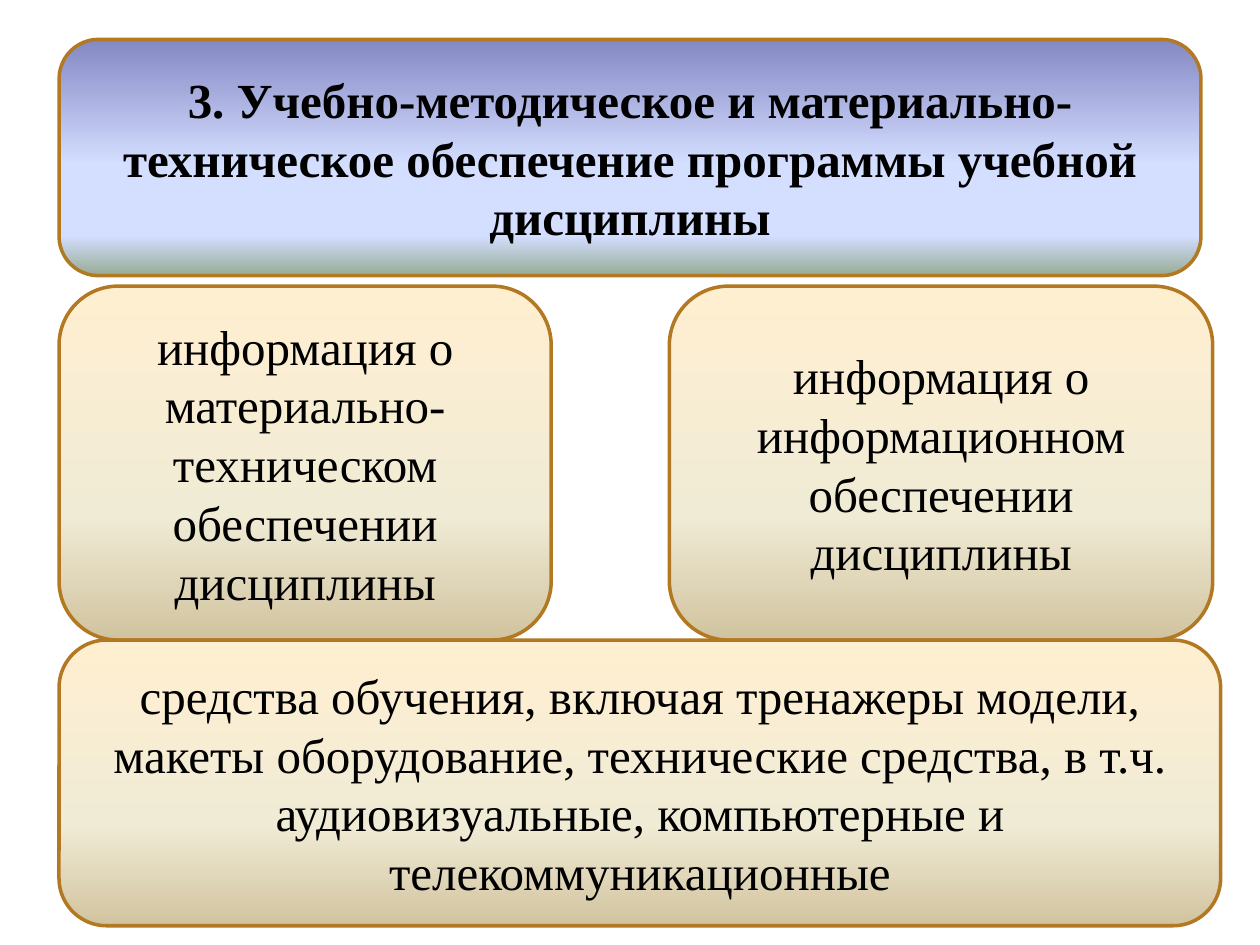
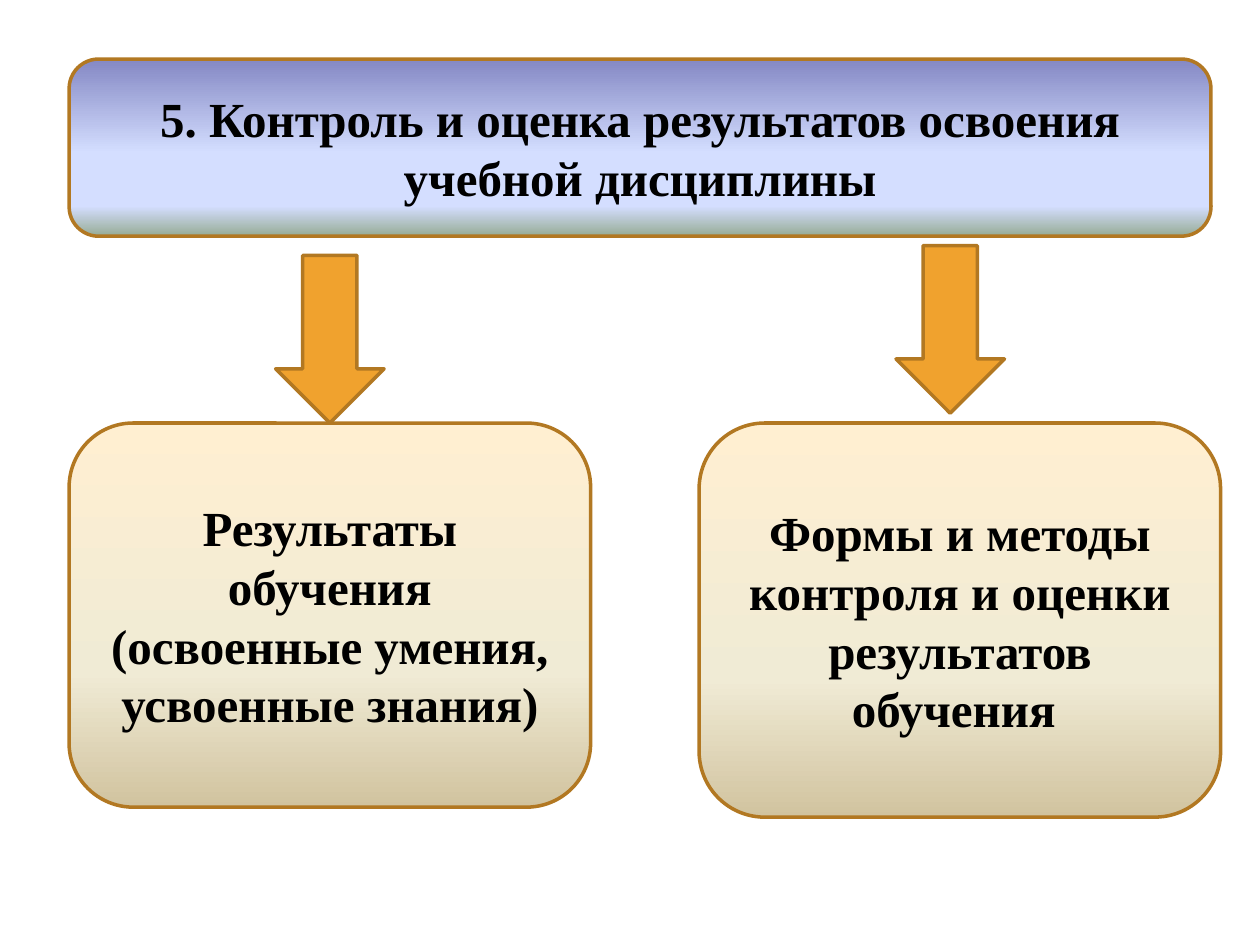
from collections import namedtuple

from lxml.etree import SubElement
from pptx import Presentation
from pptx.dml.color import RGBColor
from pptx.enum.shapes import MSO_SHAPE
from pptx.enum.text import MSO_ANCHOR, PP_ALIGN
from pptx.oxml.ns import qn
from pptx.util import Pt

Box = namedtuple("Box", "left top width height")

FONT = "Times New Roman"
TEXT_SIZE = 28
TEXT_COLOR = "000000"
LINE_COLOR = "B27822"
ARROW_COLOR = "F0A22E"
TITLE_STOPS = [(0, "8488C4"), (53, "D4DEFF"), (83, "D4DEFF"), (100, "96AB94")]
CARD_STOPS = [(0, "FFEFD1"), (65, "F0EBD5"), (100, "D1C39F")]
TITLE_WIDTH = 652.5


def color(value):
    return RGBColor.from_string(value)


def inside(area, left, top, width, height):
    return Box(area.left + left, area.top + top, width, height)


def add_outlined(page, kind, box):
    shape = page.shapes.add_shape(kind, *(Pt(length) for length in box))
    shape.shadow.inherit = False
    shape.line.color.rgb = color(LINE_COLOR)
    shape.line.width = Pt(2)
    return shape


def fill_downward(shape, stops):
    shape.fill.gradient()
    shape.fill.gradient_angle = 270
    stop_list = shape.element.spPr.find(qn("a:gradFill")).find(qn("a:gsLst"))
    for old_stop in list(stop_list):
        stop_list.remove(old_stop)
    for percent, value in stops:
        stop = SubElement(stop_list, qn("a:gs"), pos=str(percent * 1000))
        SubElement(stop, qn("a:srgbClr"), val=value)


def add_panel(page, box, paragraphs, stops, bold):
    panel = add_outlined(page, MSO_SHAPE.ROUNDED_RECTANGLE, box)
    fill_downward(panel, stops)
    frame = panel.text_frame
    frame.word_wrap = True
    frame.vertical_anchor = MSO_ANCHOR.MIDDLE
    for index, text in enumerate(paragraphs):
        para = frame.add_paragraph() if index else frame.paragraphs[0]
        para.alignment = PP_ALIGN.CENTER
        span = para.add_run()
        span.text = text
        span.font.name = FONT
        span.font.size = Pt(TEXT_SIZE)
        span.font.bold = bold
        span.font.color.rgb = color(TEXT_COLOR)


def add_title(page, box, text):
    add_panel(page, box, [text], TITLE_STOPS, True)


def add_card(page, box, *paragraphs, bold=False):
    add_panel(page, box, paragraphs, CARD_STOPS, bold)


def add_down_arrow(page, box):
    arrow = add_outlined(page, MSO_SHAPE.DOWN_ARROW, box)
    arrow.fill.solid()
    arrow.fill.fore_color.rgb = color(ARROW_COLOR)


def build_resources(page, area):
    row_top, row_height = 141, 202.25
    bottom_top = row_top + row_height
    add_card(page, inside(area, 0, row_top, 281.25, row_height),
             "информация о материально-техническом обеспечении дисциплины")
    add_card(page, inside(area, 348.75, row_top, 310.5, row_height),
             "информация о информационном обеспечении дисциплины")
    add_card(page, inside(area, 0, bottom_top, area.width, area.height - bottom_top),
             "средства обучения, включая тренажеры модели, макеты оборудование, "
             "технические средства, в т.ч. аудиовизуальные, компьютерные "
             "и телекоммуникационные")
    add_title(page, inside(area, 0, 0, TITLE_WIDTH, 135),
              "3. Учебно-методическое и материально-техническое обеспечение "
              "программы учебной дисциплины")


def build_assessment(page, area):
    card_top, card_width = 208, 298
    right_card = area.width - card_width
    arrow_width, arrow_height = 62, 95.75
    add_card(page, inside(area, 0, card_top, card_width, 219.5),
             "Результаты обучения", "(освоенные умения, усвоенные знания)", bold=True)
    add_card(page, inside(area, right_card, card_top, card_width, area.height - card_top),
             "Формы и методы контроля и оценки результатов обучения ", bold=True)
    centered = (card_width - arrow_width) / 2
    for arrow_left, gap in ((centered, 0), (right_card + centered - 5.5, 5.6)):
        arrow_top = card_top - gap - arrow_height
        add_down_arrow(page, inside(area, arrow_left, arrow_top, arrow_width, arrow_height))
    add_title(page, inside(area, 0, 0, TITLE_WIDTH, 101.25),
              "5. Контроль и оценка результатов освоения учебной дисциплины")


def main():
    deck = Presentation()
    deck.slide_width, deck.slide_height = Pt(720), Pt(540)
    blank = deck.slide_layouts[6]
    build_resources(deck.slides.add_slide(blank), Box(33.75, 22.5, 663.75, 506.5))
    build_assessment(deck.slides.add_slide(blank), Box(39.5, 33.75, 658, 433.25))
    deck.save("out.pptx")


if __name__ == "__main__":
    main()
